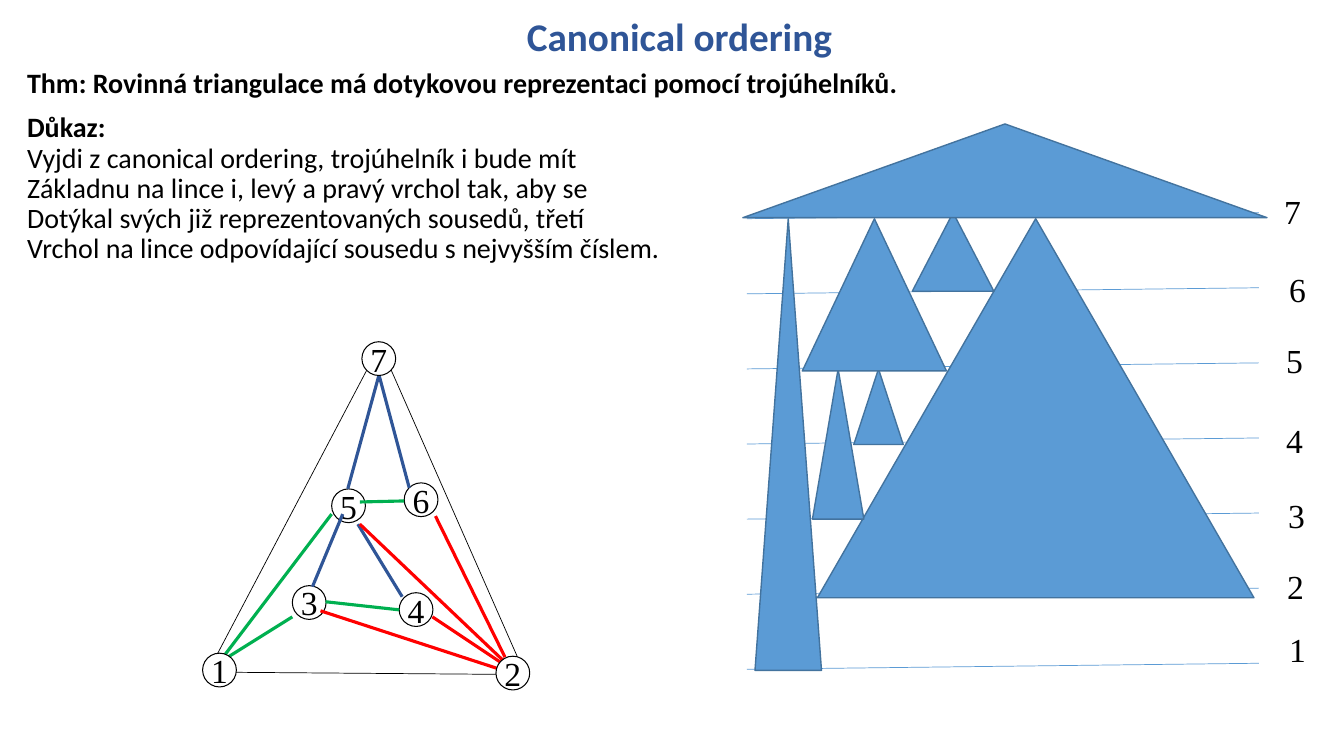
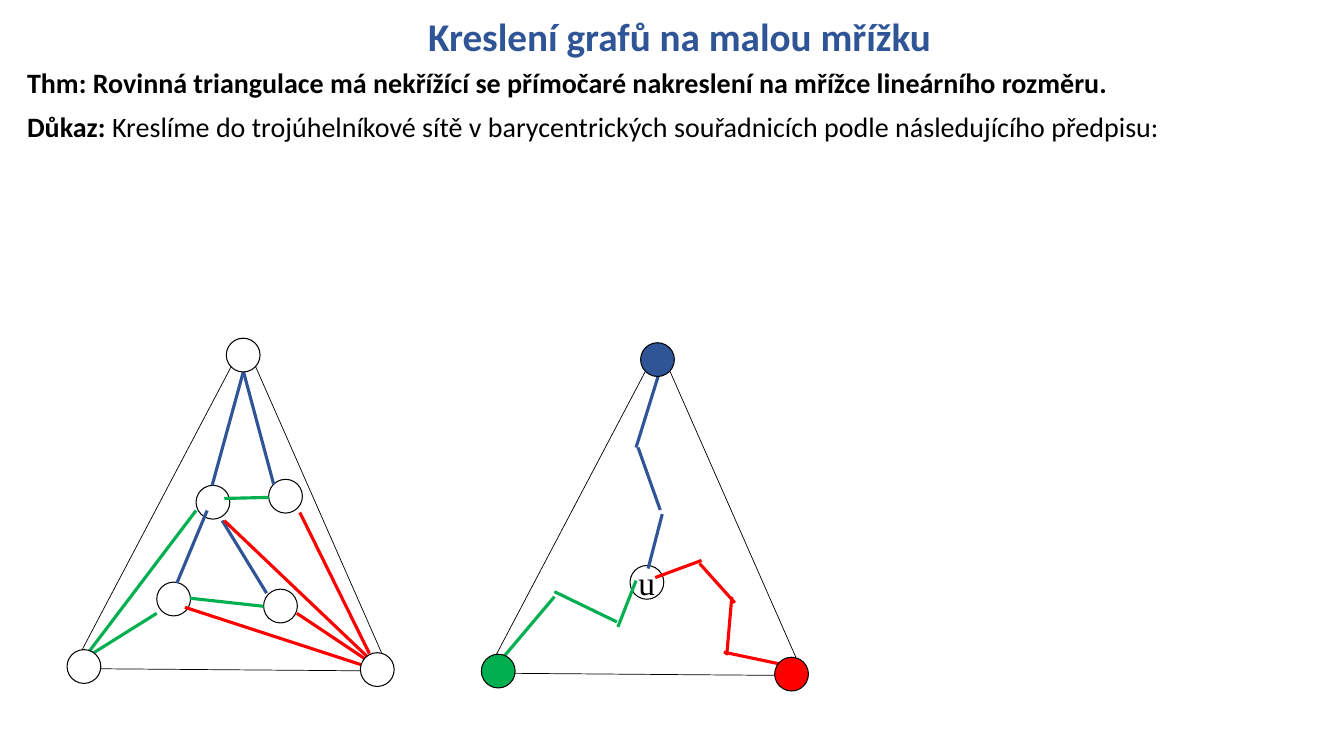
from lxml.etree import SubElement
from pptx import Presentation
from pptx.dml.color import RGBColor
from pptx.enum.shapes import MSO_CONNECTOR, MSO_SHAPE
from pptx.enum.text import MSO_ANCHOR, MSO_AUTO_SIZE, PP_ALIGN
from pptx.oxml.ns import qn
from pptx.util import Inches, Pt

BLACK = RGBColor(0x00, 0x00, 0x00)
WHITE = RGBColor(0xFF, 0xFF, 0xFF)
NAVY = RGBColor(0x2F, 0x55, 0x97)
GREEN = RGBColor(0x00, 0xB0, 0x50)
RED = RGBColor(0xFF, 0x00, 0x00)
SKY = RGBColor(0x5B, 0x9B, 0xD5)
STEEL = RGBColor(0x43, 0x73, 0x9E)

# Grid of ten columns and ten rows to the inch
COLUMNS, ROWS = 133.33, 75
NODE = 3.35
THIN, THICK = 0.5, 2.25

# Places in the triangulation: left and top of each vertex
CORNERS = {"1": (20.1, 64.8), "2": (49.2, 65.1), "7": (35.9, 33.9)}
INNER = {"3": (29, 58.1), "5": (32.9, 48.5), "6": (40.1, 47.9), "4": (39.6, 58.8)}

# Lines: from column, row to column, row
SIDES = [
    (21.5, 65, 36.4, 36.7),
    (51.3, 65.1, 38.8, 36.7),
    (23.4, 66.7, 49.2, 66.9),
]
EDGES = {
    GREEN: [
        (29, 61.2, 22.6, 65.2),
        (32.3, 59.7, 39.6, 60.5),
        (35.7, 49.8, 40.1, 49.7),
        (32.9, 51, 21.9, 65.5),
    ],
    NAVY: [
        (34, 51, 31, 58.2),
        (35.5, 52, 39.9, 59.2),
        (34.5, 48.5, 37.6, 37.2),
        (40.6, 48.4, 37.6, 37.2),
    ],
    RED: [
        (42.9, 61.2, 49.8, 65.8),
        (50.1, 65.2, 43.2, 51.2),
        (31.8, 60.6, 49.6, 66.4),
        (35.7, 52, 50.1, 65.7),
    ],
}
# Three coloured ways from vertex u to the corners
WAYS = {
    GREEN: [(61.2, 61.7, 55, 58.7), (61.3, 62.2, 63.1, 57.6), (55, 59.2, 49.6, 65.6)],
    RED: [
        (71.8, 64.7, 77.5, 65.9),
        (72.1, 65, 72.6, 59.2),
        (65, 57.3, 69.6, 55.6),
        (69.4, 55.9, 72.9, 59.8),
    ],
    NAVY: [(63.3, 44.4, 65.5, 50.6), (65.7, 51, 64.3, 56.4), (63.1, 44.4, 65.3, 37.3)],
}

# Contact representation: left, top, width, height of each triangle
TRIANGLES = [
    (74.9, 21.7, 6.6, 44.8),
    (81.1, 21.7, 43.3, 37.6),
    (80.6, 36.6, 5.1, 14.9),
    (84.7, 36.6, 4.9, 7.5),
    (79.6, 21.7, 14.3, 15.1),
    (90.5, 21.1, 8.1, 7.8),
    (73.7, 12.3, 52, 9.3),
]
LEVEL_LABELS = [
    (126.9, 61.9), (126.7, 55.7), (126.8, 48.6), (126.6, 41.2),
    (126.6, 33.2), (126.9, 26.2), (126.4, 18.4),
]
LEVEL_START, LEVEL_END = 74.1, 124.9
LEVEL_BOTTOM, LEVEL_GAP, LEVEL_RISE = 66.4, 7.45, 0.6


def grid(*lengths):
    return [Inches(length / 10) for length in lengths]


class Deck:
    """Style of the deck and the slide being drawn."""

    title_font = "Calibri"
    label_font = "Times New Roman"

    def __init__(self):
        self.deck = Presentation()
        self.deck.slide_width, self.deck.slide_height = grid(COLUMNS, ROWS)
        self.slide = None

    def page(self, title, paragraphs):
        self.slide = self.deck.slides.add_slide(self.deck.slide_layouts[6])
        frame = self.text_frame(17.4, 0.3, 100, 6.1)
        frame.vertical_anchor = MSO_ANCHOR.BOTTOM
        para = frame.paragraphs[0]
        para.alignment = PP_ALIGN.CENTER
        para.line_spacing = 0.9
        self.span(para, title, 28, self.title_font, NAVY, True)
        self.body(paragraphs)

    def text_frame(self, left, top, width, height, wrap=True):
        box = self.slide.shapes.add_textbox(*grid(left, top, width, height))
        box.text_frame.word_wrap = wrap
        return box.text_frame

    def span(self, para, text, size, font, color=BLACK, bold=False):
        span = para.add_run()
        span.text = text
        span.font.size = Pt(size)
        span.font.name = font
        span.font.color.rgb = color
        span.font.bold = bold

    def body(self, paragraphs):
        frame = self.text_frame(1.7, 6.4, 129.9, 67.2)
        for index, spans in enumerate(paragraphs):
            para = frame.add_paragraph() if index else frame.paragraphs[0]
            para.line_spacing = 0.9
            # A paragraph that opens in bold starts a new part
            para.space_before = Pt(10 if spans[0][1] else 0)
            for text, bold in spans:
                self.span(para, text, 20, self.title_font, bold=bold)

    def label(self, text, left, top):
        frame = self.text_frame(left, top, 3.7, 5, wrap=False)
        frame.auto_size = MSO_AUTO_SIZE.SHAPE_TO_FIT_TEXT
        self.span(frame.paragraphs[0], text, 24, self.label_font)

    def shape(self, kind, place, fill, line, weight):
        shape = self.slide.shapes.add_shape(kind, *grid(*place))
        shape.shadow.inherit = False
        shape.fill.solid()
        shape.fill.fore_color.rgb = fill
        shape.line.color.rgb = line
        shape.line.width = Pt(weight)
        return shape

    def vertex(self, left, top, text="", fill=WHITE):
        place = (left, top, NODE, NODE)
        circle = self.shape(MSO_SHAPE.OVAL, place, fill, BLACK, 0.75)
        if text:
            frame = circle.text_frame
            frame.word_wrap = False
            frame.vertical_anchor = MSO_ANCHOR.MIDDLE
            para = frame.paragraphs[0]
            para.alignment = PP_ALIGN.CENTER
            self.span(para, text, 24, self.label_font)

    def triangle(self, place):
        self.shape(MSO_SHAPE.ISOSCELES_TRIANGLE, place, SKY, STEEL, 1)

    def line(self, ends, color, weight, right=0, down=0):
        x1, y1, x2, y2 = ends
        line = self.slide.shapes.add_connector(
            MSO_CONNECTOR.STRAIGHT, *grid(x1 + right, y1 + down, x2 + right, y2 + down)
        )
        line.line.color.rgb = color
        line.line.width = Pt(weight)
        SubElement(line._element.spPr, qn("a:effectLst"))

    def lines(self, groups, right=0, down=0):
        for color, group in groups.items():
            for ends in group:
                self.line(ends, color, THICK, right, down)

    def outline(self, right=0, down=0, named=False, fills=None):
        for ends in SIDES:
            self.line(ends, BLACK, THIN, right, down)
        for name, (left, top) in CORNERS.items():
            fill = (fills or {}).get(name, WHITE)
            self.vertex(left + right, top + down, name if named else "", fill)

    def triangulation(self, right=0, down=0, named=False):
        for name, (left, top) in INNER.items():
            self.vertex(left + right, top + down, name if named else "")
        self.lines(EDGES, right, down)
        self.outline(right, down, named)

    def levels(self):
        for index, (left, top) in enumerate(LEVEL_LABELS):
            row = LEVEL_BOTTOM - index * LEVEL_GAP
            self.line((LEVEL_START, row, LEVEL_END, row - LEVEL_RISE), SKY, THIN)
            self.label(str(index + 1), left, top)


def main():
    deck = Deck()

    # Contact representation by triangles
    deck.page("Canonical ordering", [
        [("Thm: Rovinná triangulace má dotykovou reprezentaci pomocí trojúhelníků.", True)],
        [("Důkaz:", True)],
        [("Vyjdi z canonical ordering, trojúhelník i bude mít", False)],
        [("Základnu na lince i, levý a pravý vrchol tak, aby se", False)],
        [("Dotýkal svých již reprezentovaných sousedů, třetí", False)],
        [("Vrchol na lince odpovídající sousedu s nejvyšším číslem.", False)],
    ])
    deck.triangulation(named=True)
    deck.levels()
    for place in TRIANGLES:
        deck.triangle(place)

    # Drawing on a small grid
    deck.page("Kreslení grafů na malou mřížku", [
        [("Thm: Rovinná triangulace má nekřížící se přímočaré nakreslení "
          "na mřížce lineárního rozměru.", True)],
        [("Důkaz: ", True),
         ("Kreslíme do trojúhelníkové sítě v barycentrických souřadnicích "
          "podle následujícího předpisu:", False)],
    ])
    deck.triangulation(right=-13.45, down=-0.35)
    deck.vertex(62.5, 56.1, "u")
    deck.lines(WAYS)
    deck.outline(right=27.65, down=0.1, fills={"1": GREEN, "2": RED, "7": NAVY})

    deck.deck.save("out.pptx")


if __name__ == "__main__":
    main()
